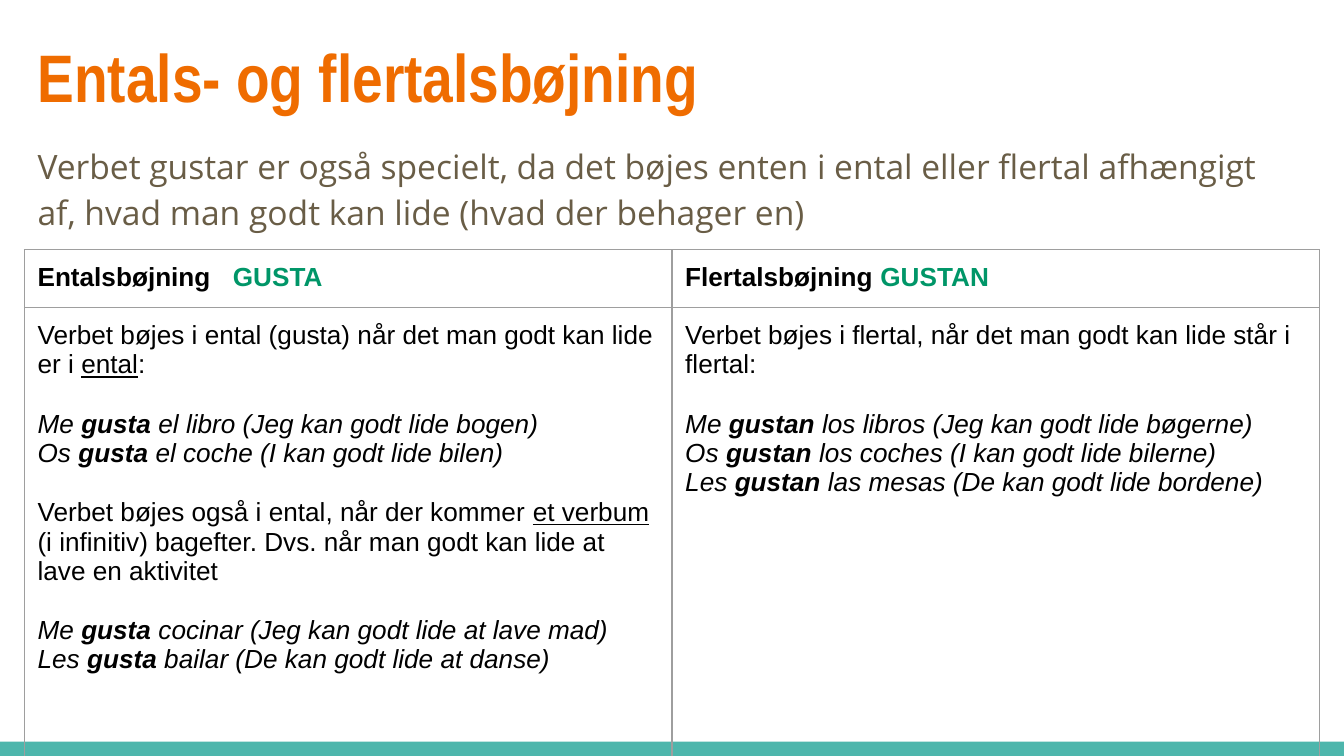
"""Build a slide on singular and plural forms of the verb gustar."""
from dataclasses import dataclass, field

import pptx
import pptx.dml.color
import pptx.enum.shapes
import pptx.oxml
import pptx.oxml.ns
import pptx.util

Cm = pptx.util.Cm
Pt = pptx.util.Pt
INSET = Cm(0.25)
GREEN = "009668"


@dataclass
class Run:
    text: str
    color: str = "000000"
    fmt: dict = field(default_factory=dict)


@dataclass
class Para:
    runs: list[Run]
    before: float = 0
    tab: float = 0


def rgb(value: str) -> pptx.dml.color.RGBColor:
    """Turn a hex string into a colour."""
    return pptx.dml.color.RGBColor.from_string(value)


def heading(text: str, form: str, tab: float = 0) -> Para:
    """Make a column heading with the verb form in green."""
    gap = "\t" if tab else " "
    return Para([Run(text + gap, fmt={"bold": True}), Run(form, GREEN, {"bold": True})], tab=tab)


def example(pronoun: str, verb: str, rest: str, before: float = 0) -> Para:
    """Make an italic example with a bold verb."""
    italic = {"italic": True}
    return Para([Run(pronoun + " ", fmt=italic), Run(verb, fmt={"italic": True, "bold": True}),
                 Run(" " + rest, fmt=italic)], before)


def rule(start: str, marked: str = "", end: str = "", before: float = 0) -> Para:
    """Make a plain sentence with an optional underlined part."""
    runs = [Run(start), Run(marked, fmt={"underline": True}), Run(end)]
    return Para([run for run in runs if run.text], before)


def write(tf, paras: list[Para], font: str, size: float) -> None:
    """Write paragraphs into a text frame."""
    tf.word_wrap = True
    for i, para in enumerate(paras):
        p = tf.add_paragraph() if i else tf.paragraphs[0]
        if para.tab:
            tabs = pptx.oxml.parse_xml(
                f'<a:tabLst {pptx.oxml.ns.nsdecls("a")}><a:tab pos="{Cm(para.tab)}" algn="l"/></a:tabLst>')
            p._p.get_or_add_pPr().append(tabs)
        if para.before:
            p.space_before = Pt(para.before)
        for run in para.runs:
            r = p.add_run()
            r.text = run.text
            for name, value in {"name": font, "size": Pt(size), **run.fmt}.items():
                setattr(r.font, name, value)
            r.font.color.rgb = rgb(run.color)


def set_margins(target, prefix: str = "margin_") -> None:
    """Give a cell or text frame equal margins."""
    for side in ("left", "top", "right", "bottom"):
        setattr(target, prefix + side, INSET)


def add_text(s, top: float, height: float, run: Run, font: str, size: float):
    """Add a full-width text box and return its paragraph."""
    tf = s.shapes.add_textbox(Cm(0.46), Cm(top), Cm(23.67), Cm(height)).text_frame
    set_margins(tf)
    write(tf, [Para([run])], font, size)
    return tf.paragraphs[0]


def add_borders(cell, color: str, width: float) -> None:
    """Draw a thin line on each side of a cell."""
    pr = cell._tc.get_or_add_tcPr()
    for i, side in enumerate(("lnL", "lnR", "lnT", "lnB")):
        pr.insert(i, pptx.oxml.parse_xml(
            f'<a:{side} {pptx.oxml.ns.nsdecls("a")} w="{Pt(width)}"><a:solidFill>'
            f'<a:srgbClr val="{color}"/></a:solidFill></a:{side}>'))


def add_grid(s, rows: list[list[list[Para]]], heights: list[float]) -> None:
    """Add the comparison table."""
    table = s.shapes.add_table(len(rows), 2, Cm(0.46), Cm(4.72), Cm(24.48), Cm(sum(heights))).table
    table.first_row = table.horz_banding = False
    for i, row in enumerate(rows):
        table.rows[i].height = Cm(heights[i])
        for j, paras in enumerate(row):
            cell = table.cell(i, j)
            set_margins(cell)
            cell.fill.background()
            add_borders(cell, "9E9E9E", 0.75)
            write(cell.text_frame, paras, "Arial", 14)


ROWS = [
    [[heading("Entalsbøjning", "GUSTA", 3.69)], [heading("Flertalsbøjning", "GUSTAN")]],
    [[rule("Verbet bøjes i ental (gusta) når det man godt kan lide er i ", "ental", ":"),
      example("Me", "gusta", "el libro (Jeg kan godt lide bogen)", 16),
      example("Os", "gusta", "el coche (I kan godt lide bilen)"),
      rule("Verbet bøjes også i ental, når der kommer ", "et verbum",
           " (i infinitiv) bagefter. Dvs. når man godt kan lide at lave en aktivitet", 16),
      example("Me", "gusta", "cocinar (Jeg kan godt lide at lave mad)", 16),
      example("Les", "gusta", "bailar (De kan godt lide at danse)")],
     [rule("Verbet bøjes i flertal, når det man godt kan lide står i flertal:"),
      example("Me", "gustan", "los libros (Jeg kan godt lide bøgerne)", 16),
      example("Os", "gustan", "los coches (I kan godt lide bilerne)"),
      example("Les", "gustan", "las mesas (De kan godt lide bordene)")]],
]


def main() -> None:
    """Build and save the slide."""
    prs = pptx.Presentation()
    prs.slide_width, prs.slide_height = Cm(25.4), Cm(14.29)
    s = prs.slides.add_slide(prs.slide_layouts[6])
    sp = s.shapes.add_shape(pptx.enum.shapes.MSO_SHAPE.RECTANGLE, 0, Cm(14.02), prs.slide_width, Cm(0.27))
    sp.shadow.inherit = False
    sp.fill.solid()
    sp.fill.fore_color.rgb = rgb("4DB6AC")
    sp.line.fill.background()
    add_text(s, 0.41, 1.96, Run("Entals- og flertalsbøjning", "EF6C00", {"bold": True}), "Arial Narrow", 36)
    p = add_text(s, 2.39, 9.17, Run(
        "Verbet gustar er også specielt, da det bøjes enten i ental eller flertal afhængigt af, "
        "hvad man godt kan lide (hvad der behager en)", "695D46"), "Open Sans", 18)
    p.line_spacing = 1.15
    add_grid(s, ROWS, [1.06, 8.7])
    prs.save("out.pptx")


if __name__ == "__main__":
    main()
